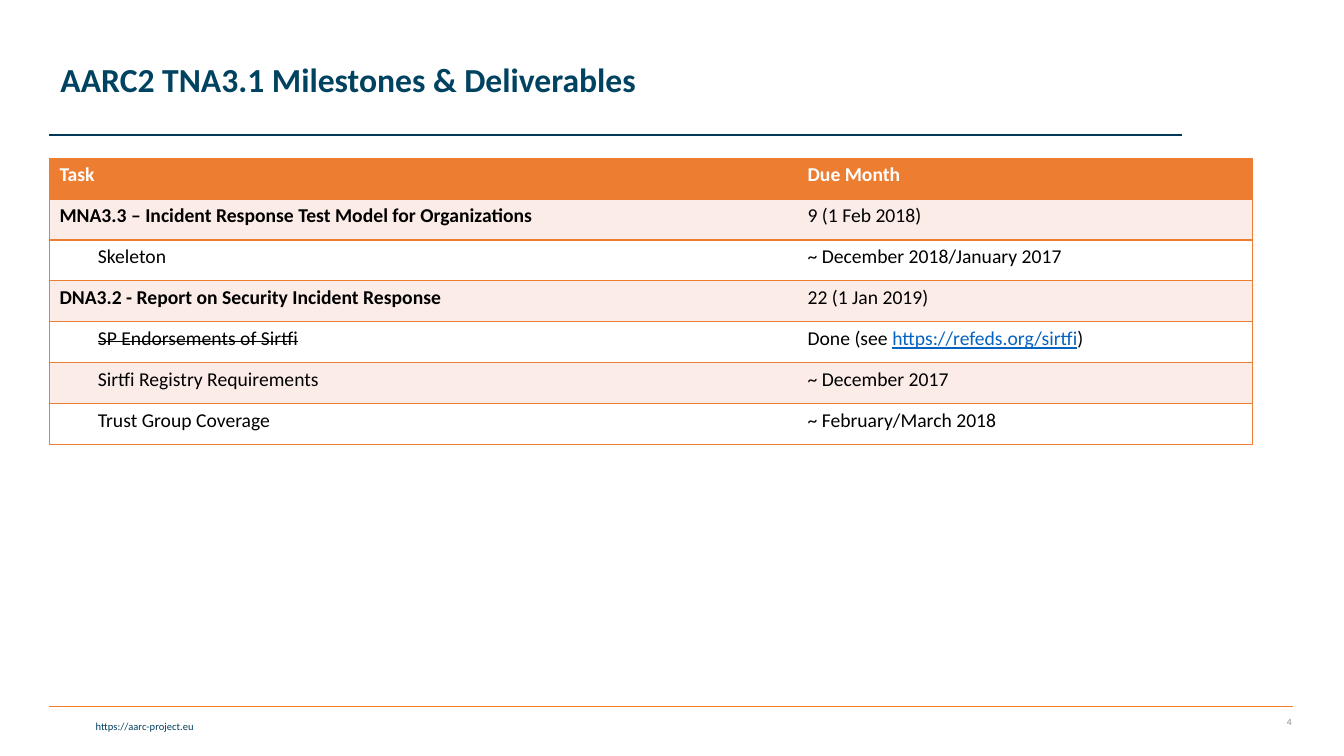
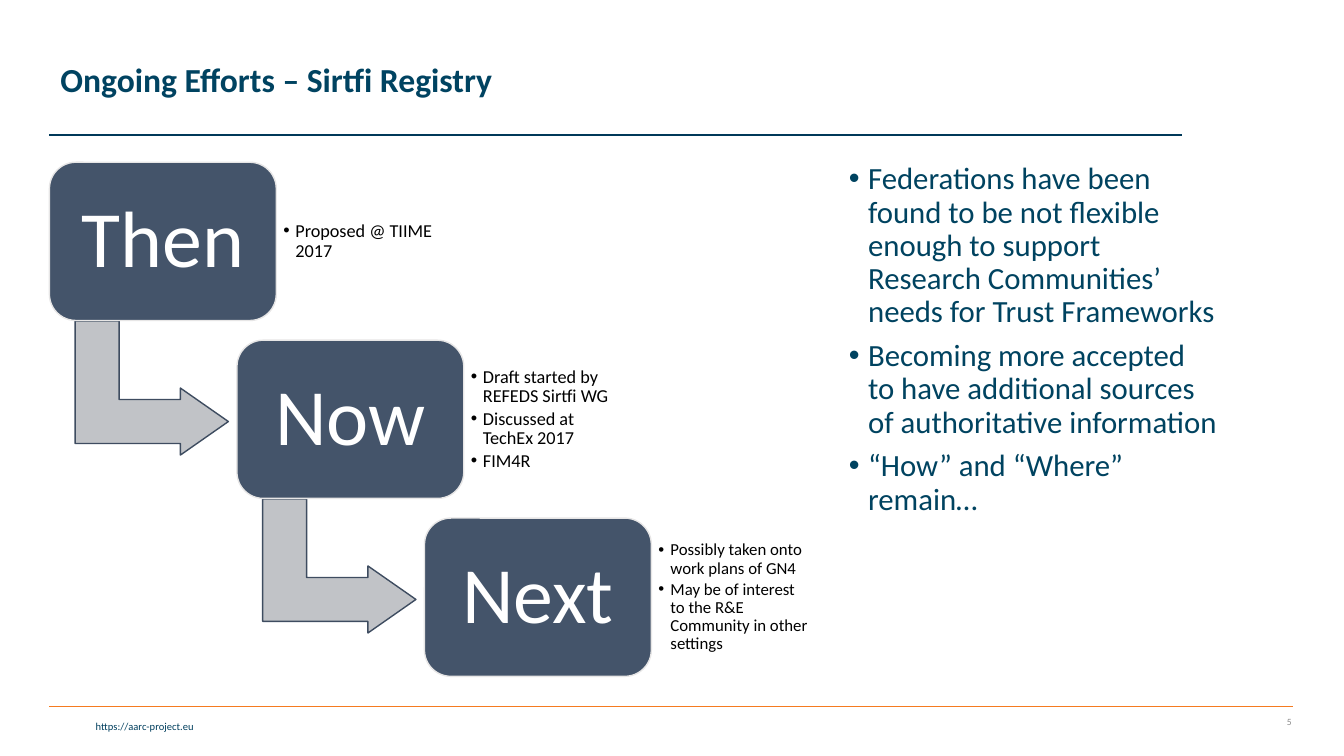
from lxml import etree
from pptx import Presentation
from pptx.dml import color
from pptx.enum import shapes, text
from pptx.oxml import ns
from pptx.util import Inches, Pt

FONT = "Calibri"
NAVY, ORANGE, BLACK, WHITE = "004361", "ED7D31", "000000", "FFFFFF"
SLATE, PINK, LINK = "44546A", "FCECE8", "0563C1"
LEFT, RIGHT, CENTER = text.PP_ALIGN.LEFT, text.PP_ALIGN.RIGHT, text.PP_ALIGN.CENTER
TOP, MIDDLE = text.MSO_ANCHOR.TOP, text.MSO_ANCHOR.MIDDLE

LINK_TEXT = "https://refeds.org/sirtfi"
TASKS = [
    ("Task", ["Due Month"]),
    ("MNA3.3 – Incident Response Test Model for Organizations", ["9 (1 Feb 2018)"]),
    ("Skeleton", ["~ December 2018/January 2017"]),
    ("DNA3.2 - Report on Security Incident Response", ["22 (1 Jan 2019)"]),
    ("SP Endorsements of Sirtfi", ["Done (see ", LINK_TEXT, ")"]),
    ("Sirtfi Registry Requirements", ["~ December 2017"]),
    ("Trust Group Coverage", ["~ February/March 2018"]),
]
MAIN_ROWS, DONE_ROW = (0, 1, 3), 4

STEPS = [
    ("Then", 13, ["Proposed @ TIIME 2017"]),
    ("Now", 13, ["Draft started by REFEDS Sirtfi WG", "Discussed at TechEx 2017", "FIM4R"]),
    ("Next", 12, ["Possibly taken onto work plans of GN4",
                  "May be of interest to the R&E Community in other settings"]),
]
POINTS = [
    "Federations have been found to be not flexible enough to support "
    "Research Communities’ needs for Trust Frameworks",
    "Becoming more accepted to have additional sources of authoritative information",
    "“How” and “Where” remain…",
]


def rgb(code):
    return color.RGBColor.from_string(code)


def inches(*values):
    return [Inches(v) for v in values]


def sub(parent, tag, **attrs):
    return etree.SubElement(parent, ns.qn(tag), attrs)


def style(run, size, hue, bold=False):
    run.font.name, run.font.size, run.font.bold = FONT, Pt(size), bold
    run.font.color.rgb = rgb(hue)


def write(frame, lines, size, hue, bold=False, align=LEFT, anchor=TOP,
          inset=(0.1, 0.05), hang=0, gap=0, ratio=0.9):
    """Fill a text frame; a hang above zero makes bulleted lines."""
    frame.text = "\n".join(lines)
    frame.word_wrap = True
    frame.auto_size = text.MSO_AUTO_SIZE.NONE
    frame.vertical_anchor = anchor
    frame.margin_left = frame.margin_right = Inches(inset[0])
    frame.margin_top = frame.margin_bottom = Inches(inset[1])
    for i, para in enumerate(frame.paragraphs):
        if hang:
            props = para._p.get_or_add_pPr()
            props.set("marL", str(Inches(hang)))
            props.set("indent", str(-Inches(hang)))
            sub(props, "a:buFont", typeface="Arial")
            sub(props, "a:buChar", char="•")
        para.alignment, para.line_spacing = align, ratio
        para.space_before = Pt(gap if i else 0)
        for run in para.runs:
            style(run, size, hue, bold)


def label(slide, box, lines, size, hue, **look):
    write(slide.shapes.add_textbox(*inches(*box)).text_frame, lines, size, hue, **look)


def rule(slide, x1, x2, y, hue):
    line = slide.shapes.add_connector(shapes.MSO_CONNECTOR.STRAIGHT, *inches(x1, y, x2, y))
    line.line.color.rgb, line.line.width = rgb(hue), Pt(1)
    sub(line._element.spPr, "a:effectLst")


def block(slide, kind, box, fill, edge, adjust):
    shape = slide.shapes.add_shape(kind, *inches(*box))
    shape.shadow.inherit = False
    shape.fill.solid()
    shape.fill.fore_color.rgb = rgb(fill)
    shape.line.color.rgb, shape.line.width = rgb(edge), Pt(1)
    for i, value in enumerate(adjust):
        shape.adjustments[i] = value
    return shape


def place(shape, box):
    shape.left, shape.top, shape.width, shape.height = inches(*box)


def start(deck, layout, title, number):
    """Add a slide with the shared title, rules and footer."""
    slide = deck.slides.add_slide(deck.slide_layouts[layout])
    place(slide.shapes.title, (0.5, 0.08, 10.51, 1.45))
    write(slide.shapes.title.text_frame, [title], 24, NAVY, bold=True, anchor=MIDDLE)
    rule(slide, 0.49, 11.72, 1.34, "003959")
    rule(slide, 0.49, 12.82, 7.01, "F57B20")
    label(slide, (0.03, 7.09, 1.99, 0.23), ["https://aarc-project.eu"], 7.5, "003F5E",
          align=RIGHT, ratio=1)
    label(slide, (12.1, 7.01, 0.81, 0.3), [str(number)], 6.8, "8C8C8C",
          align=RIGHT, anchor=MIDDLE, ratio=1)
    return slide


def border(cell, sides):
    """Draw the listed sides in orange and clear the others."""
    props = cell._tc.get_or_add_tcPr()
    for side in "LRTB":
        line = sub(props, "a:ln" + side, w=str(Pt(1)))
        if side in sides:
            sub(sub(line, "a:solidFill"), "a:srgbClr", val=ORANGE)
        else:
            sub(line, "a:noFill")


def paint(cell, runs, row, col):
    border(cell, ("L" if col == 0 else "R") + "TB")
    cell.fill.solid()
    cell.fill.fore_color.rgb = rgb(ORANGE if row == 0 else PINK if row % 2 else WHITE)
    para = cell.text_frame.paragraphs[0]
    for words in runs:
        run = para.add_run()
        run.text = words
        bold = row == 0 or (col == 0 and row in MAIN_ROWS)
        style(run, 14, WHITE if row == 0 else LINK if words == LINK_TEXT else BLACK, bold)
        if words == LINK_TEXT:
            run.font.underline = True
        if col == 0 and row == DONE_ROW:
            run._r.get_or_add_rPr().set("strike", "sngStrike")
    if col == 0 and row not in MAIN_ROWS:
        para._p.get_or_add_pPr().set("marL", str(Inches(0.38)))


def tasks(slide, box):
    table = slide.shapes.add_table(len(TASKS), 2, *inches(*box)).table
    table.horz_banding = False
    for col, width in zip(table.columns, (7.42, box[2] - 7.42)):
        col.width = Inches(width)
    for row, (task, due) in enumerate(TASKS):
        paint(table.cell(row, 0), [task], row, 0)
        paint(table.cell(row, 1), due, row, 1)


def stairs(slide, left, top):
    """Place the steps on a falling diagonal, each joined to the next."""
    wide, high = 2.25, 1.57
    for i, (name, size, notes) in enumerate(STEPS):
        x, y = left + i * 1.86, top + i * 1.765
        if i < len(STEPS) - 1:
            arrow = block(slide, shapes.MSO_SHAPE.BENT_UP_ARROW,
                          (x + 0.35, y + 1.48, 1.33, 1.52), "C1C3C7", "3E4C60",
                          (0.328, 0.25, 0.358))
            arrow.rotation = 90
        step = block(slide, shapes.MSO_SHAPE.ROUNDED_RECTANGLE, (x, y, wide, high),
                     SLATE, "E7E6E6", (0.167,))
        write(step.text_frame, [name], 57, WHITE, align=CENTER, anchor=MIDDLE)
        label(slide, (x + wide, y + 0.15, 1.63, 1.27), notes, size, BLACK,
              anchor=MIDDLE, inset=(0.07, 0.07), hang=0.12, gap=2)


def points(slide, box):
    body = slide.placeholders[1]
    place(body, box)
    write(body.text_frame, POINTS, 22, "004360", hang=0.19, gap=7.5)


def main():
    deck = Presentation()
    deck.slide_width, deck.slide_height = inches(13.33, 7.5)
    plan = start(deck, 5, "AARC2 TNA3.1 Milestones & Deliverables", 4)
    tasks(plan, (0.49, 1.57, 11.93, 2.84))
    effort = start(deck, 1, "Ongoing Efforts – Sirtfi Registry", 5)
    stairs(effort, 0.49, 1.61)
    points(effort, (8.32, 1.57, 3.86, 5.18))
    deck.save("out.pptx")


if __name__ == "__main__":
    main()
